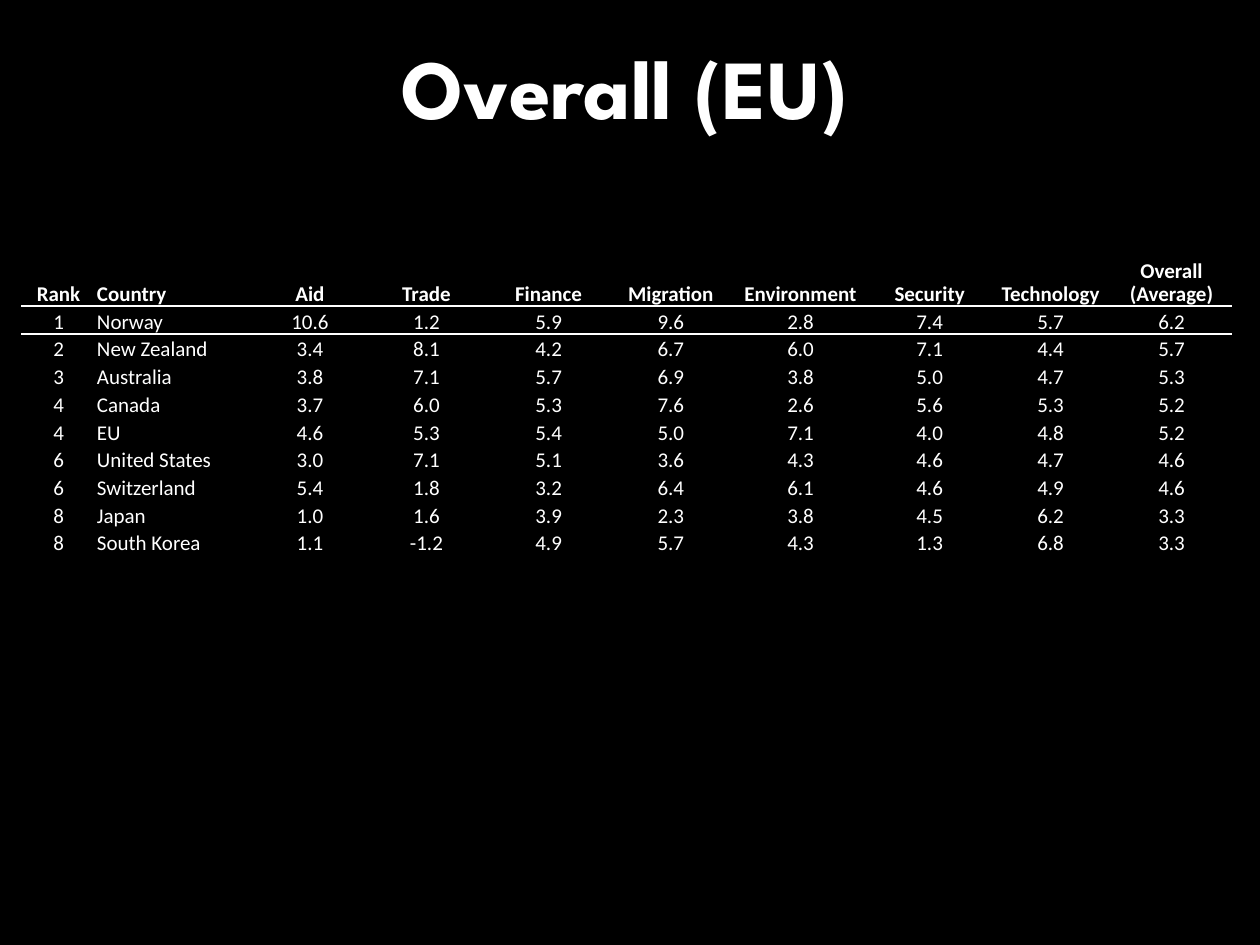
from lxml import etree
from pptx import Presentation, util as u
from pptx.dml.color import RGBColor
from pptx.enum import text
from pptx.oxml.ns import qn

NO_GRID = "{2D5ABB26-0587-4C30-8999-92F81FD0307C}"
WHITE, BLACK = "FFFFFF", "000000"
LEFT, CENTER = text.PP_ALIGN.LEFT, text.PP_ALIGN.CENTER

WIDTHS = [0.59, 1.26, 0.88, 0.97, 0.97, 0.97, 1.09, 0.96, 0.96, 0.96]
ROWS = [
    ["Rank", "Country", "Aid", "Trade", "Finance", "Migration",
     "Environment", "Security", "Technology", "Overall (Average)"],
    [1, "Norway", 10.6, 1.2, 5.9, 9.6, 2.8, 7.4, 5.7, 6.2],
    [2, "New Zealand", 3.4, 8.1, 4.2, 6.7, 6.0, 7.1, 4.4, 5.7],
    [3, "Australia", 3.8, 7.1, 5.7, 6.9, 3.8, 5.0, 4.7, 5.3],
    [4, "Canada", 3.7, 6.0, 5.3, 7.6, 2.6, 5.6, 5.3, 5.2],
    [4, "EU", 4.6, 5.3, 5.4, 5.0, 7.1, 4.0, 4.8, 5.2],
    [6, "United States", 3.0, 7.1, 5.1, 3.6, 4.3, 4.6, 4.7, 4.6],
    [6, "Switzerland", 5.4, 1.8, 3.2, 6.4, 6.1, 4.6, 4.9, 4.6],
    [8, "Japan", 1.0, 1.6, 3.9, 2.3, 3.8, 4.5, 6.2, 3.3],
    [8, "South Korea", 1.1, -1.2, 4.9, 5.7, 4.3, 1.3, 6.8, 3.3],
]


def color(value):
    return RGBColor.from_string(value)


def set_all(target, values):
    for name, value in values.items():
        setattr(target, name, value)


class Deck:
    title_font = {"name": "League Spartan", "size": u.Pt(48), "bold": True}
    table_font = {"name": "Calibri", "size": u.Pt(12)}
    cell_format = {
        "margin_left": u.Inches(0.01), "margin_right": u.Inches(0.01),
        "margin_top": u.Inches(0.01), "margin_bottom": 0,
        "vertical_anchor": text.MSO_ANCHOR.BOTTOM,
    }

    def __init__(self, prs):
        self.s = prs.slides.add_slide(prs.slide_layouts[6])
        fill = self.s.background.fill
        fill.solid()
        fill.fore_color.rgb = color(BLACK)

    def paragraph(self, tf, words, align, font):
        p = tf.paragraphs[0]
        p.alignment = align
        r = p.add_run()
        r.text = words
        set_all(r.font, font)
        r.font.color.rgb = color(WHITE)
        return p

    def title(self, words, x, y, w, h):
        sp = self.s.shapes.add_textbox(*map(u.Inches, (x, y, w, h)))
        set_all(sp.text_frame, {"word_wrap": True,
                                "vertical_anchor": text.MSO_ANCHOR.MIDDLE})
        self.paragraph(sp.text_frame, words, CENTER, self.title_font)

    def border(self, cell, side):
        ln = etree.Element(qn(f"a:{side}"), w=str(u.Pt(1)))
        fill = etree.SubElement(ln, qn("a:solidFill"))
        etree.SubElement(fill, qn("a:srgbClr"), val=WHITE)
        cell._tc.get_or_add_tcPr().insert(0, ln)

    def table(self, rows, widths, x, y, header_height, row_height):
        height = header_height + row_height * (len(rows) - 1)
        frame = self.s.shapes.add_table(
            len(rows), len(widths),
            *map(u.Inches, (x, y, sum(widths), height)))
        tbl = frame.table
        set_all(tbl, {"first_row": False, "horz_banding": False})
        next(frame.element.iter(qn("a:tableStyleId"))).text = NO_GRID
        for column, width in zip(tbl.columns, widths):
            column.width = u.Inches(width)
        for i, values in enumerate(rows):
            tbl.rows[i].height = u.Inches(row_height if i else header_height)
            for j, value in enumerate(values):
                cell = tbl.cell(i, j)
                set_all(cell, self.cell_format)
                cell.fill.background()
                p = self.paragraph(cell.text_frame, str(value),
                                   LEFT if j == 1 else CENTER,
                                   {**self.table_font, "bold": i == 0})
                p.line_spacing = 0.9
                # Rule between the header and the first country
                if i < 2:
                    self.border(cell, "lnT" if i else "lnB")


def main():
    prs = Presentation()
    set_all(prs, {"slide_width": u.Inches(10), "slide_height": u.Inches(7.5)})
    deck = Deck(prs)
    # Heading
    deck.title("Overall (EU)", 0.5, 0.5, 8.92, 0.37)
    # Country scores
    deck.table(ROWS, WIDTHS, 0.17, 2, 0.43, 0.22)
    prs.save("out.pptx")


if __name__ == "__main__":
    main()
